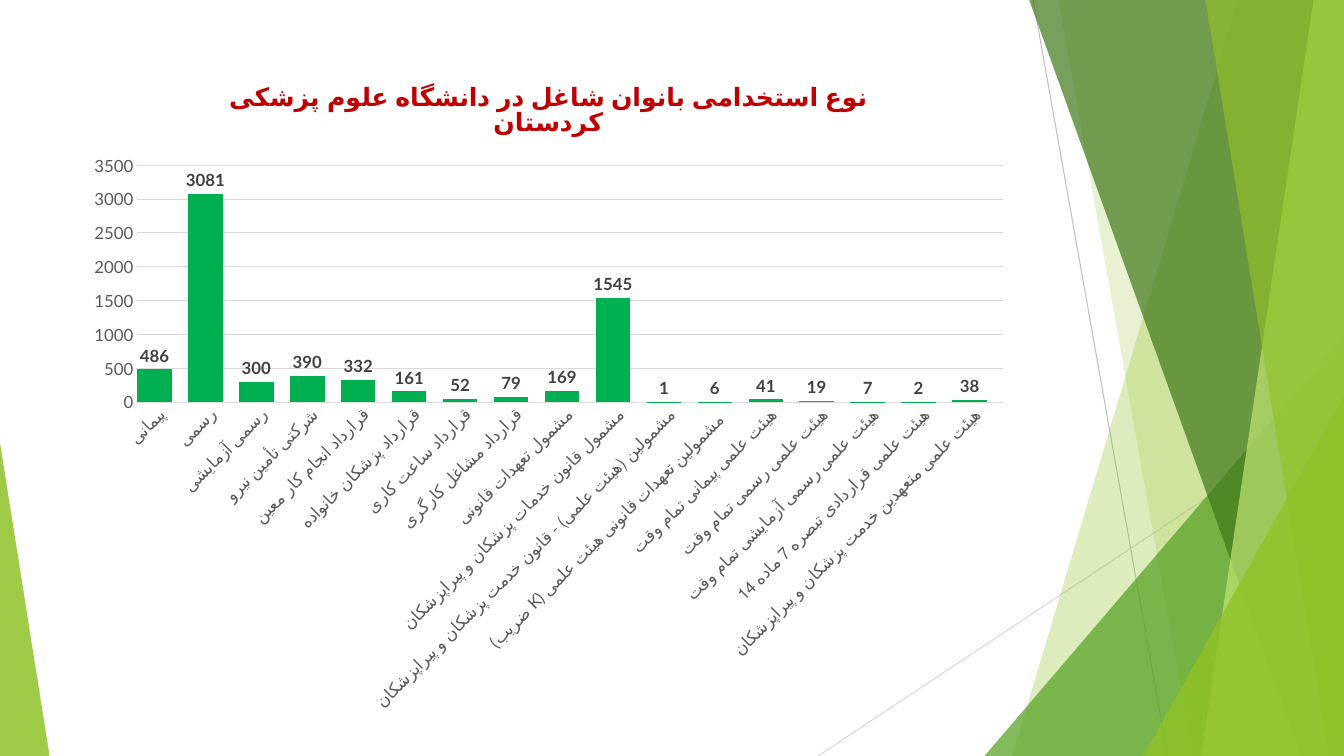
from lxml import etree
from pptx import Presentation
from pptx import util as u
from pptx.chart.data import CategoryChartData
from pptx.dml.color import RGBColor
from pptx.enum import chart as ch, shapes, text
from pptx.oxml import parse_xml
from pptx.oxml.ns import nsdecls, qn

THEME = dict(
    font="Lato", title_size=18, base_size=10, label_size=12,
    title="C00000", axis="595959", label="404040", base="000000",
    rule="D9D9D9", rule_dark="BFBFBF",
    bar="00B050", leaf="54A021", gold="E6B91E",
    lime="90C226", forest="3F7819", pale="C0E474",
)
COLS, ROWS = 160, 90

prs = Presentation()
prs.slide_width, prs.slide_height = u.Emu(12192000), u.Emu(6858000)
s = prs.slides.add_slide(prs.slide_layouts[6])
UNIT = prs.slide_width // COLS


def g(*cells):
    return [u.Emu(round(c * UNIT)) for c in cells]


def style_font(font, size, color, bold=False):
    font.name, font.size, font.bold = THEME["font"], u.Pt(size), bold
    font.color.rgb = RGBColor.from_string(THEME[color])


for x1, y1, x2, y2, color in [(123, 0, 139, ROWS, "rule_dark"),
                              (COLS, 48.4, 97.4, ROWS, "rule")]:
    ln = s.shapes.add_connector(shapes.MSO_CONNECTOR.STRAIGHT, *g(x1, y1, x2, y2))
    ln.line.color.rgb = RGBColor.from_string(THEME[color])
    ln.line.width = u.Pt(0.75)
    etree.SubElement(ln._element.spPr, qn("a:effectLst"))

facets = [
    ("band", 147.4, 120.5, "lime", 30),
    ("band", 126, 142, "lime", 20),
    ("right", 117.2, 40, "leaf", 72),
    ("band", 122.5, 154.9, "forest", 70),
    ("band", 156.4, 143, "pale", 70),
    ("band", 143.5, 158.2, "lime", 65),
    ("right", 136.1, 47.2, "lime", 80),
    ("left", 5.9, 52.7, "lime", 85),
]
for kind, a, b, color, opacity in facets:
    if kind == "band":
        fb = s.shapes.build_freeform(*g(a, -0.1))
        fb.add_line_segments([g(COLS, -0.1), g(COLS, ROWS), g(b, ROWS)], close=True)
        sp = fb.convert_to_shape()
    else:
        x, w = (a, COLS - a) if kind == "right" else (0, a)
        sp = s.shapes.add_shape(shapes.MSO_SHAPE.ISOSCELES_TRIANGLE, *g(x, b, w, ROWS - b))
        sp.adjustments[0] = 1 if kind == "right" else 0
    sp.shadow.inherit = False
    sp.line.fill.background()
    sp.fill.solid()
    sp.fill.fore_color.rgb = RGBColor.from_string(THEME[color])
    clr = sp._element.spPr.find(qn("a:solidFill"))[0]
    etree.SubElement(clr, qn("a:alpha")).set("val", str(opacity * 1000))

staff = [
    ("پیمانی", 486),
    ("رسمی", 3081),
    ("رسمی آزمایشی", 300),
    ("شرکتی تأمین نیرو", 390),
    ("قرارداد انجام کار معین", 332),
    ("قرارداد پزشکان خانواده", 161),
    ("قرارداد ساعت کاری", 52),
    ("قرارداد مشاغل کارگری", 79),
    ("مشمول تعهدات قانونی", 169),
    ("مشمول قانون خدمات پزشکان و پیراپزشکان", 1545),
    ("مشمولین (هیئت علمی) - قانون خدمت پزشکان و پیراپزشکان", 1),
    ("(ضریب K) مشمولین تعهدات قانونی هیئت علمی ", 6),
    ("هیئت علمی پیمانی تمام وقت", 41),
    ("هیئت علمی رسمی تمام وقت", 19),
    ("هیئت علمی رسمی آزمایشی تمام وقت", 7),
    ("هیئت علمی قراردادی تبصره 7 ماده 14", 2),
    ("هیئت علمی متعهدین خدمت پزشکان و پیراپزشکان", 38),
]
cd = CategoryChartData()
cd.categories = [name for name, _ in staff]
cd.add_series("Series 1", [n for _, n in staff])
for name in ("Series 2", "Series 3"):
    cd.add_series(name, [None] * len(staff))

chart = s.shapes.add_chart(ch.XL_CHART_TYPE.COLUMN_CLUSTERED, *g(8.9, 7.2, 112.8, 79), cd).chart
style_font(chart.font, THEME["base_size"], "base")
chart.has_legend = False
chart.has_title = True
tf = chart.chart_title.text_frame
p = tf.paragraphs[0]
p.alignment = text.PP_ALIGN.CENTER
r = p.add_run()
r.text = "نوع استخدامی بانوان شاغل در دانشگاه علوم پزشکی کردستان"
style_font(r.font, THEME["title_size"], "title", True)
chart.chart_title.include_in_layout = False

plot = chart.plots[0]
plot.vary_by_categories = False
plot.gap_width, plot.overlap = 0, 76
for ser, color in zip(plot.series, ("bar", "leaf", "gold")):
    ser.format.fill.solid()
    ser.format.fill.fore_color.rgb = RGBColor.from_string(THEME[color])
    ser.invert_if_negative = False
dl = plot.series[0].data_labels
dl.show_value = True
dl.position = ch.XL_LABEL_POSITION.OUTSIDE_END
style_font(dl.font, THEME["label_size"], "label", True)

cat, val = chart.category_axis, chart.value_axis
for ax in (cat, val):
    ax.major_tick_mark = ax.minor_tick_mark = ch.XL_TICK_MARK.NONE
    style_font(ax.tick_labels.font, THEME["label_size"], "axis")
val.minimum_scale, val.maximum_scale, val.major_unit = 0, 3500, 500
val.has_major_gridlines = True
val.format.line.fill.background()
for line in (cat.format.line, val.major_gridlines.format.line):
    line.color.rgb = RGBColor.from_string(THEME["rule"])
    line.width = u.Pt(0.75)
cat._element.find(qn("c:txPr")).find(qn("a:bodyPr")).set("rot", "-2700000")

area = chart._chartSpace.chart.plotArea
for old in area.findall(qn("c:layout")):
    area.remove(old)
box = "".join(f'<c:{k} val="{v}"/>' for k, v in [
    ("layoutTarget", "inner"), ("xMode", "edge"), ("yMode", "edge"),
    ("x", 0.066), ("y", 0.158), ("w", 0.914), ("h", 0.357)])
area.insert(0, parse_xml(
    f'<c:layout {nsdecls("c")}><c:manualLayout>{box}</c:manualLayout></c:layout>'))

prs.save("out.pptx")
